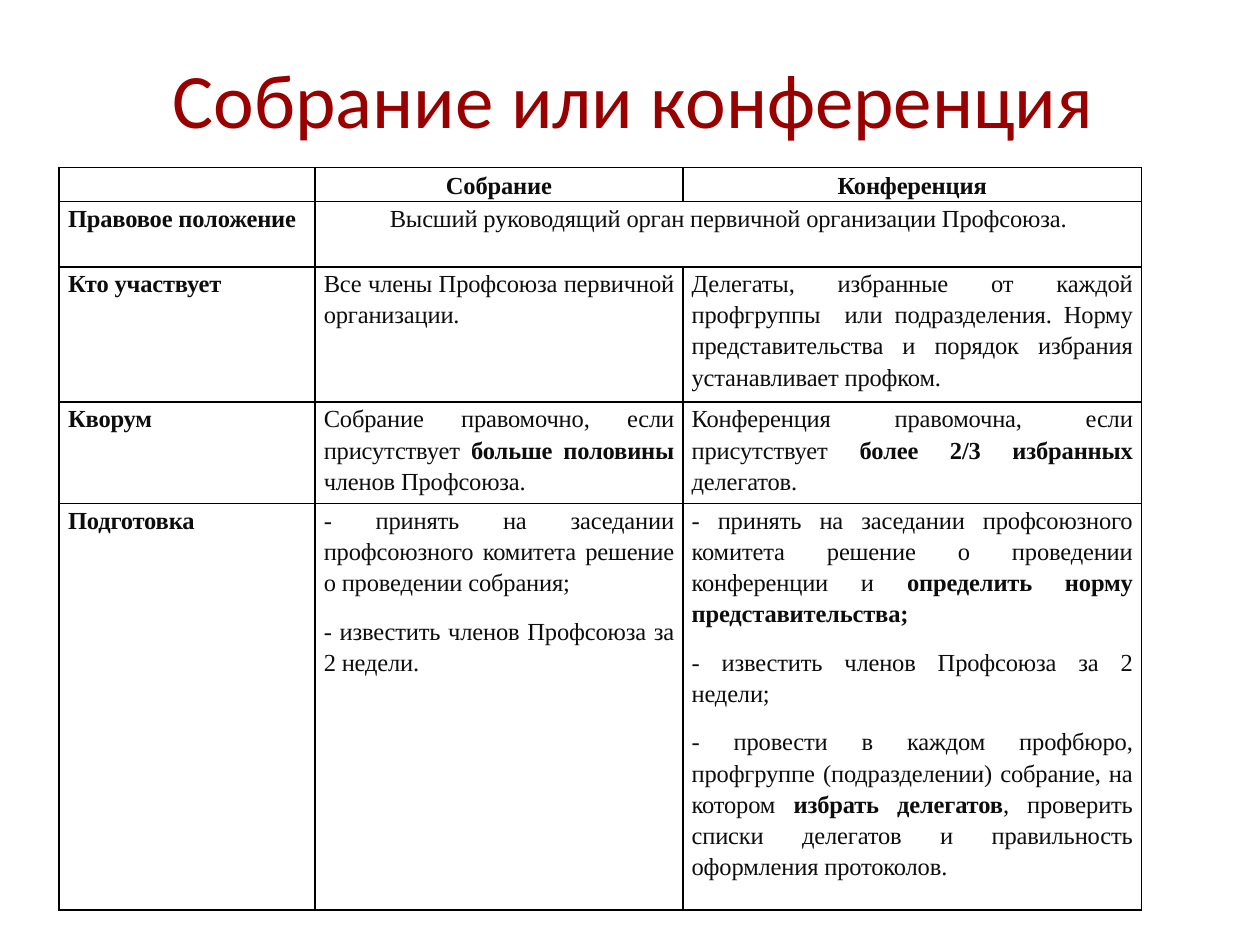
"""Build a slide that compares a meeting with a conference."""
from dataclasses import dataclass

from lxml import etree
from pptx import Presentation
from pptx.dml.color import RGBColor
from pptx.enum.text import MSO_ANCHOR, PP_ALIGN
from pptx.oxml.ns import qn
from pptx.util import Inches, Pt

LEFT, MID, JUST = PP_ALIGN.LEFT, PP_ALIGN.CENTER, PP_ALIGN.JUSTIFY
TOP, MIDDLE = MSO_ANCHOR.TOP, MSO_ANCHOR.MIDDLE


@dataclass(frozen=True)
class Theme:
    """Colours, fonts and type sizes."""
    title: str = "990000"
    text: str = "0D0D0D"
    rule: str = "000000"
    head: str = "Calibri"
    body: str = "Times New Roman"
    large: int = 44
    small: int = 14


THEME = Theme()
TITLE = "Собрание или конференция"
COLS = [2.03, 2.92, 3.64]
# Asterisk pairs mark bold words; each cell holds its alignment and paragraphs.
ROWS = [
    (0.26, [
        (MID, [""]),
        (MID, ["**Собрание**"]),
        (MID, ["**Конференция**"]),
    ]),
    (0.52, [
        (LEFT, ["**Правовое положение**"]),
        (MID, ["Высший руководящий орган первичной организации Профсоюза."]),
    ]),
    (1.04, [
        (JUST, ["**Кто участвует**"]),
        (JUST, ["Все члены Профсоюза первичной организации."]),
        (JUST, ["Делегаты, избранные от каждой профгруппы  или подразделения. "
                "Норму представительства и порядок избрания устанавливает профком."]),
    ]),
    (0.52, [
        (JUST, ["**Кворум**"]),
        (JUST, ["Собрание правомочно, если присутствует **больше половины **"
                "членов Профсоюза."]),
        (JUST, ["Конференция правомочна, если присутствует "
                "**более 2/3 избранных **делегатов."]),
    ]),
    (3.18, [
        (LEFT, ["**Подготовка**"]),
        (JUST, ["- принять на заседании профсоюзного комитета решение "
                "о проведении собрания;",
                "- известить членов Профсоюза за 2 недели."]),
        (JUST, ["- принять на заседании профсоюзного комитета решение о проведении "
                "конференции и **определить норму представительства;**",
                "- известить членов Профсоюза за 2 недели;",
                "- провести в каждом профбюро, профгруппе (подразделении) собрание, "
                "на котором **избрать делегатов**, проверить списки делегатов "
                "и правильность оформления протоколов."]),
    ]),
]


def style(font, name, size, color):
    """Set the face, size and colour of a font."""
    font.name, font.size = name, Pt(size)
    font.color.rgb = RGBColor.from_string(color)


def add_title(slide):
    """Add the centred heading."""
    box = slide.shapes.add_textbox(Inches(0.78), Inches(0.23), Inches(8.5), Inches(1.09))
    frame = box.text_frame
    frame.word_wrap, frame.vertical_anchor = True, MIDDLE
    para = frame.paragraphs[0]
    para.text, para.alignment = TITLE, MID
    style(para.font, THEME.head, THEME.large, THEME.title)


def fill_para(para, text, align):
    """Write one paragraph, with bold between double asterisks."""
    para.alignment, para.line_spacing, para.space_after = align, 1.15, Pt(10)
    style(para.font, THEME.body, THEME.small, THEME.text)
    for i, part in enumerate(text.split("**")):
        if part:
            run = para.add_run()
            run.text, run.font.bold = part, i % 2 == 1
            run._r.get_or_add_rPr().set("spc", "-10")


def frame_cell(cell):
    """Rule all four sides of a cell and clear its fill."""
    props = cell._tc.get_or_add_tcPr()
    for side in ("lnL", "lnR", "lnT", "lnB"):
        line = etree.SubElement(props, qn(f"a:{side}"), w=str(Pt(1)))
        fill = etree.SubElement(line, qn("a:solidFill"))
        etree.SubElement(fill, qn("a:srgbClr"), val=THEME.rule)
    cell.fill.background()
    cell.margin_left = cell.margin_right = Inches(0.07)
    cell.margin_top = cell.margin_bottom = 0


def add_grid(slide):
    """Add the comparison table."""
    high = sum(row[0] for row in ROWS)
    table = slide.shapes.add_table(
        len(ROWS), len(COLS), Inches(0.47), Inches(1.33),
        Inches(sum(COLS)), Inches(high)).table
    table.first_row = table.horz_banding = False
    for col, width in zip(table.columns, COLS):
        col.width = Inches(width)
    for cell in table.iter_cells():
        frame_cell(cell)
    for r, (height, cells) in enumerate(ROWS):
        table.rows[r].height = Inches(height)
        for c, (align, paras) in enumerate(cells):
            cell = table.cell(r, c)
            cell.vertical_anchor = TOP if r else MIDDLE
            frame = cell.text_frame
            for i, text in enumerate(paras):
                para = frame.add_paragraph() if i else frame.paragraphs[0]
                fill_para(para, text, align)
        if len(cells) < len(COLS):
            table.cell(r, len(cells) - 1).merge(table.cell(r, len(COLS) - 1))


def main():
    """Create and save the deck."""
    deck = Presentation()
    deck.slide_width, deck.slide_height = Inches(10), Inches(7.5)
    slide = deck.slides.add_slide(deck.slide_layouts[6])
    add_title(slide)
    add_grid(slide)
    deck.save("out.pptx")


if __name__ == "__main__":
    main()
